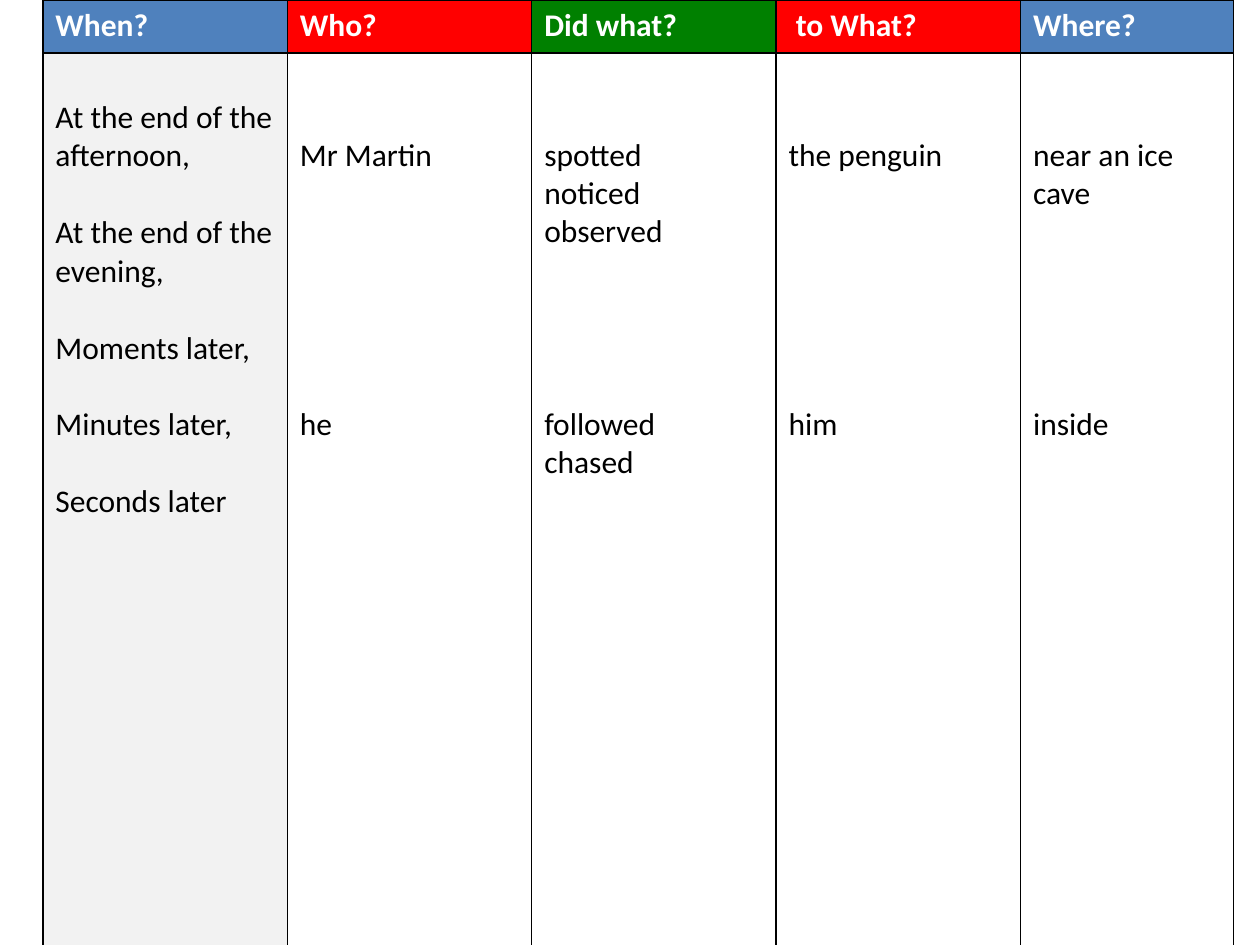
from dataclasses import dataclass

from lxml import etree
from pptx import Presentation
from pptx.dml.color import RGBColor
from pptx.oxml.ns import qn
from pptx.util import Inches, Pt


@dataclass(frozen=True)
class Theme:
    font: str = "Calibri"
    size: int = 18
    line: int = 22  # height of one text line, in points
    blue: str = "4F81BD"
    red: str = "FF0000"
    green: str = "008000"
    grey: str = "F2F2F2"
    white: str = "FFFFFF"
    black: str = "000000"


T = Theme()
PAD = 0.05

# heading, heading fill, body fill, body lines as (text, empty lines above)
COLUMNS = [
    ("When?", T.blue, T.grey, [
        ("At the end of the afternoon,", 1), ("At the end of the evening,", 1),
        ("Moments later,", 1), ("Minutes later,", 1), ("Seconds later", 1)]),
    ("Who?", T.red, T.white, [("Mr Martin", 2), ("he", 6)]),
    ("Did what?", T.green, T.white, [
        ("spotted", 2), ("noticed", 0), ("observed", 0),
        ("followed", 4), ("chased", 0)]),
    (" to What?", T.red, T.white, [("the penguin", 2), ("him", 6)]),
    ("Where?", T.blue, T.white, [("near an ice cave", 2), ("inside", 5)]),
]


def fill_cell(cell, lines, fill, color=T.black, bold=False):
    """Write (text, empty lines above) pairs and set borders and fill."""
    tf = cell.text_frame
    for i, (text, gap) in enumerate(lines):
        p = tf.add_paragraph() if i else tf.paragraphs[0]
        if i:
            p.space_before = Pt(gap * T.line)
        else:
            cell.margin_top = Inches(PAD + round(gap * T.line / 72, 2))
        r = p.add_run()
        r.text = text
        r.font.name, r.font.size, r.font.bold = T.font, Pt(T.size), bold
        r.font.color.rgb = RGBColor.from_string(color)

    tc_pr = cell._tc.get_or_add_tcPr()
    for side in ("a:lnL", "a:lnR", "a:lnT", "a:lnB"):
        ln = etree.SubElement(tc_pr, qn(side), w=str(Pt(1)))
        solid = etree.SubElement(ln, qn("a:solidFill"))
        etree.SubElement(solid, qn("a:srgbClr"), val=T.black)
    cell.fill.solid()
    cell.fill.fore_color.rgb = RGBColor.from_string(fill)


prs = Presentation()
prs.slide_width, prs.slide_height = Inches(10), Inches(7.5)
s = prs.slides.add_slide(prs.slide_layouts[6])

table = s.shapes.add_table(2, len(COLUMNS), Inches(0.34), Inches(0),
                           Inches(9.46), Inches(7.72)).table
for col in table.columns:
    col.width = Inches(1.94)
table.columns[len(COLUMNS) - 1].width = Inches(1.69)
table.rows[0].height, table.rows[1].height = Inches(0.42), Inches(7.3)

for c, (heading, head_fill, body_fill, lines) in enumerate(COLUMNS):
    fill_cell(table.cell(0, c), [(heading, 0)], head_fill,
              color=T.white, bold=True)
    fill_cell(table.cell(1, c), lines, body_fill)

prs.save("out.pptx")
